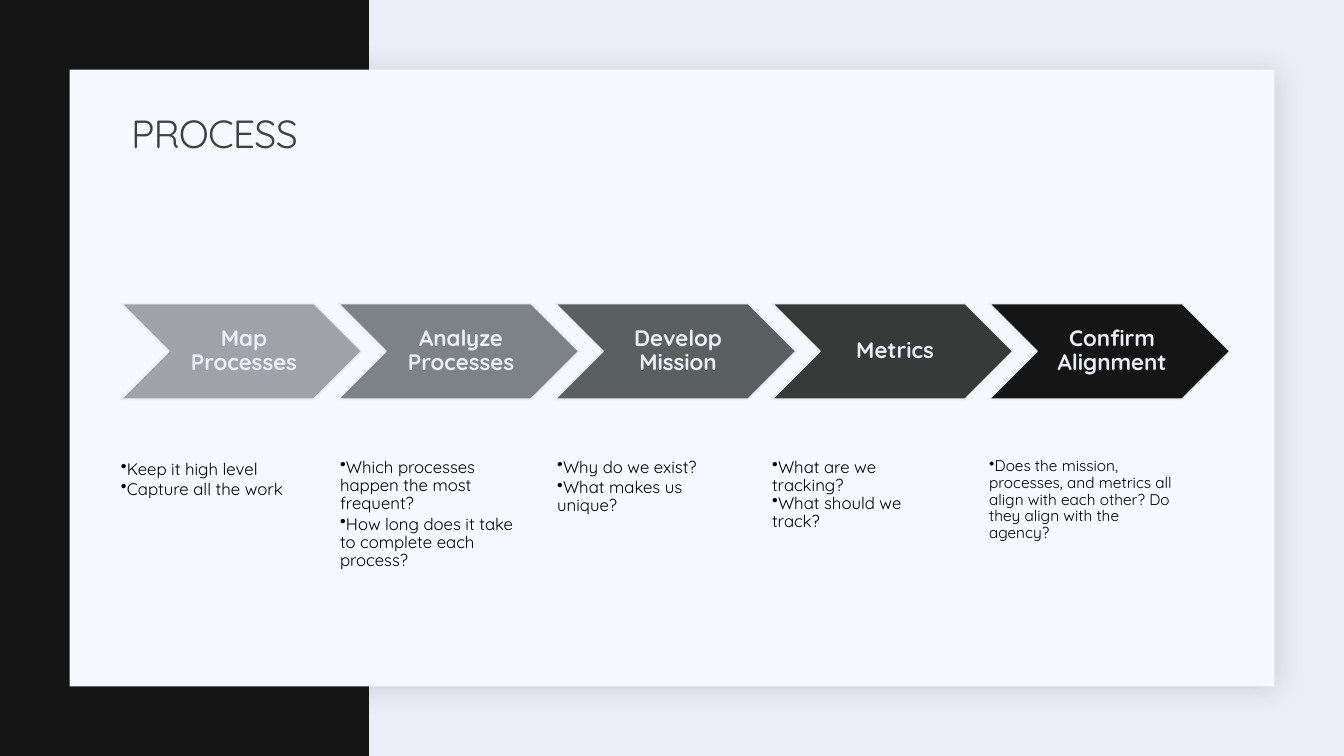
import pptx
import pptx.util
import pptx.dml.color
import pptx.enum.shapes
import pptx.enum.text
import pptx.oxml
import pptx.oxml.ns

Inches = pptx.util.Inches
RGBColor = pptx.dml.color.RGBColor
MSO_SHAPE = pptx.enum.shapes.MSO_SHAPE
MSO_ANCHOR = pptx.enum.text.MSO_ANCHOR
PP_ALIGN = pptx.enum.text.PP_ALIGN

FONT = "Quicksand"
PALE = RGBColor(0xEC, 0xEE, 0xF7)
CARD = RGBColor(0xF6, 0xF9, 0xFF)
INK = RGBColor(0x14, 0x15, 0x14)
BLACK = RGBColor(0, 0, 0)
TITLE_GRAY = RGBColor(0x40, 0x40, 0x40)
STEP_COLORS = [
    RGBColor(0xA1, 0xA2, 0xA9),
    RGBColor(0x7C, 0x82, 0x86),
    RGBColor(0x5A, 0x60, 0x60),
    RGBColor(0x37, 0x3A, 0x39),
    INK,
]

STEPS = [
    ("Map Processes", ["Keep it high level", "Capture all the work"],
     {"right_inset": 0.2}),
    ("Analyze Processes",
     ["Which processes happen the most frequent?",
      "How long does it take to complete each process?"],
     {"line_spacing": 0.9, "space_after": 1.8, "indent": 0.02}),
    ("Develop Mission", ["Why do we exist?", "What makes us unique?"],
     {"line_spacing": 0.9, "space_after": 1.8, "indent": 0.02, "right_inset": 0.2}),
    ("Metrics", ["What are we tracking?", "What should we track?"],
     {"line_spacing": 0.9, "right_inset": 0.2}),
    ("Confirm Alignment",
     ["Does the mission, processes, and metrics all align with each other? "
      "Do they align with the agency?"],
     {"line_spacing": 0.9, "size": 11}),
]

CHEVRON_WIDTH = 2.39
CHEVRON_HEIGHT = 0.95
LIST_TOP = 1.07
LIST_WIDTH = 1.91
LIST_HEIGHT = 1.64


def place(shape, left, top, width, height):
    shape.left, shape.top = Inches(left), Inches(top)
    shape.width, shape.height = Inches(width), Inches(height)


def write_text(shape, lines, size=12, color=BLACK, bold=False, align=PP_ALIGN.LEFT,
               anchor=MSO_ANCHOR.TOP, insets=(0.1, 0.05, 0.1, 0.05), line_spacing=1.0,
               space_after=0, bullet=False, indent=0, tracking=0):
    frame = shape.text_frame
    frame.word_wrap = True
    frame.auto_size = pptx.enum.text.MSO_AUTO_SIZE.NONE
    frame.vertical_anchor = anchor
    (frame.margin_left, frame.margin_top,
     frame.margin_right, frame.margin_bottom) = map(Inches, insets)
    for index, line in enumerate(lines):
        paragraph = frame.add_paragraph() if index else frame.paragraphs[0]
        paragraph.alignment = align
        paragraph.line_spacing = line_spacing
        paragraph.space_before = pptx.util.Pt(0)
        paragraph.space_after = pptx.util.Pt(space_after)
        run = paragraph.add_run()
        run.text = line
        run.font.name = FONT
        run.font.size = pptx.util.Pt(size)
        run.font.bold = bold
        run.font.color.rgb = color
        if tracking:
            run._r.get_or_add_rPr().set("spc", str(int(tracking * 100)))
        if bullet:
            properties = paragraph._p.get_or_add_pPr()
            properties.set("marL", str(Inches(indent)))
            properties.set("indent", "0")
            properties.append(pptx.oxml.parse_xml(
                f'<a:buChar {pptx.oxml.ns.nsdecls("a")} char="•"/>'))


def add_filled(slide, kind, box, fill, line=None):
    shape = slide.shapes.add_shape(kind, *map(Inches, box))
    shape.shadow.inherit = False
    shape.fill.solid()
    shape.fill.fore_color.rgb = fill
    if line is None:
        shape.line.fill.background()
    else:
        shape.line.color.rgb = line
        shape.line.width = pptx.util.Pt(1.25)
    return shape


def add_backdrop(slide, left, top, width, height):
    slide.background.fill.solid()
    slide.background.fill.fore_color.rgb = PALE
    add_filled(slide, MSO_SHAPE.RECTANGLE, (left, top, 3.66, height), INK)
    margin = 0.69
    card = add_filled(slide, MSO_SHAPE.RECTANGLE,
                      (left + margin, top + margin, width - 2 * margin, height - 2 * margin), CARD)
    effects = card.element.spPr.find(pptx.oxml.ns.qn("a:effectLst"))
    effects.append(pptx.oxml.parse_xml(
        f'<a:outerShdw {pptx.oxml.ns.nsdecls("a")} blurRad="{pptx.util.Pt(20)}" '
        f'dist="{pptx.util.Pt(2)}" dir="2700000" algn="tl" rotWithShape="0">'
        '<a:srgbClr val="1F2125"><a:alpha val="15000"/></a:srgbClr></a:outerShdw>'))


def add_title(slide, left, top, width, height):
    title = slide.shapes.title
    place(title, left, top, width, height)
    write_text(title, ["PROCESS"], size=28, color=TITLE_GRAY, anchor=MSO_ANCHOR.MIDDLE,
               line_spacing=0.9, tracking=-0.5)
    slide.shapes.element.append(title.element)


def add_step(slide, left, top, color, heading, points, right_inset=0, **list_format):
    add_filled(slide, MSO_SHAPE.CHEVRON, (left, top, CHEVRON_WIDTH, CHEVRON_HEIGHT), color, PALE)
    notch = CHEVRON_HEIGHT / 2
    label = slide.shapes.add_textbox(
        *map(Inches, (left + notch, top, CHEVRON_WIDTH - 2 * notch, CHEVRON_HEIGHT)))
    write_text(label, [heading], size=16, color=PALE, bold=True, align=PP_ALIGN.CENTER,
               anchor=MSO_ANCHOR.MIDDLE, insets=(0.07, 0.02, 0.02, 0.02), line_spacing=0.9)
    details = slide.shapes.add_textbox(
        *map(Inches, (left, top + LIST_TOP, LIST_WIDTH, LIST_HEIGHT)))
    write_text(details, points, bullet=True, insets=(0, 0.47, right_inset, 0), **list_format)


def add_process(slide, left, top, width):
    pitch = (width - CHEVRON_WIDTH) / (len(STEPS) - 1)
    for index, (color, (heading, points, list_format)) in enumerate(zip(STEP_COLORS, STEPS)):
        add_step(slide, left + index * pitch, top, color, heading, points, **list_format)


def main():
    presentation = pptx.Presentation()
    presentation.slide_width = Inches(13.33)
    presentation.slide_height = Inches(7.5)
    slide = presentation.slides.add_slide(presentation.slide_layouts.get_by_name("Title Only"))
    add_backdrop(slide, 0, 0, 13.33, 7.5)
    add_process(slide, 1.2, 3.01, 11)
    add_title(slide, 1.2, 1.03, 11, 0.64)
    presentation.save("out.pptx")


if __name__ == "__main__":
    main()
